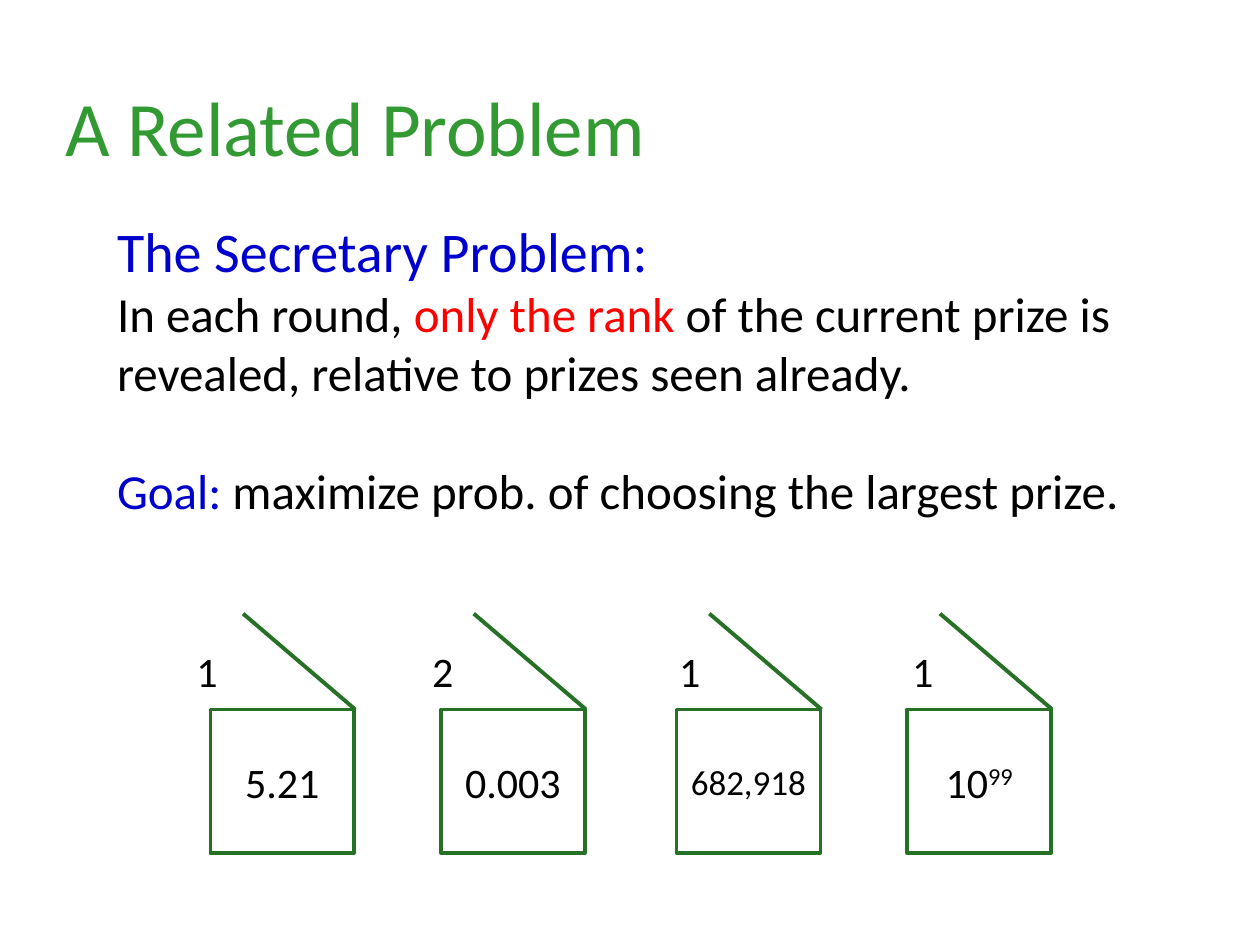
"""Build the slide that introduces the Secretary Problem with four opened prize boxes."""
import pptx
import pptx.dml.color
import pptx.enum.shapes
import pptx.enum.text
import pptx.oxml.ns
import pptx.util
from lxml import etree
from pptx.util import Cm, Pt

FONT = "Calibri"
BLACK, BLUE, RED, GREEN, DARK_GREEN = "000000", "0000CC", "FF0000", "339933", "267126"

TITLE = [(44, 0, [("A Related Problem", GREEN)])]
STATEMENT = [
    (32, 0, [("The Secretary Problem:", BLUE)]),
    (28, 0, [
        ("In each round, ", BLACK),
        ("only the rank", RED),
        (" of the current prize is revealed, relative to prizes seen already.", BLACK),
    ]),
    (28, 34, [("Goal:", BLUE), (" maximize prob. of choosing the largest prize.", BLACK)]),
]
PRIZES = [
    {"rank": "1", "value": "5.21", "power": "", "size": 24, "left": 4.24, "rank_left": 3.71},
    {"rank": "2", "value": "0.003", "power": "", "size": 24, "left": 8.89, "rank_left": 8.46},
    {"rank": "1", "value": "682,918", "power": "", "size": 20, "left": 13.64, "rank_left": 13.44},
    {"rank": "1", "value": "10", "power": "99", "size": 24, "left": 18.29, "rank_left": 18.14},
]
BOX_TOP, BOX_SIDE = 14.3, 2.9
LID_WIDTH, LID_HEIGHT = 2.26, 1.93
RANK_TOP = 12.88


def color(hex_code):
    return pptx.dml.color.RGBColor.from_string(hex_code)


def write(frame, paragraphs):
    for index, (size, gap, runs) in enumerate(paragraphs):
        paragraph = frame.add_paragraph() if index else frame.paragraphs[0]
        paragraph.font.name = FONT
        paragraph.font.size = Pt(size)
        paragraph.space_before = Pt(gap)
        for words, hex_code in runs:
            run = paragraph.add_run()
            run.text = words
            run.font.color.rgb = color(hex_code)


def add_text(slide, left, top, width, height, paragraphs, wrap=False):
    frame = slide.shapes.add_textbox(Cm(left), Cm(top), Cm(width), Cm(height)).text_frame
    frame.word_wrap = wrap
    write(frame, paragraphs)


def add_box(slide, prize):
    box = slide.shapes.add_shape(
        pptx.enum.shapes.MSO_SHAPE.RECTANGLE,
        Cm(prize["left"]), Cm(BOX_TOP), Cm(BOX_SIDE), Cm(BOX_SIDE))
    box.shadow.inherit = False
    box.fill.background()
    box.line.color.rgb = color(DARK_GREEN)
    box.line.width = Pt(2)
    box.text_frame.vertical_anchor = pptx.enum.text.MSO_ANCHOR.MIDDLE
    parts = [(part, BLACK) for part in (prize["value"], prize["power"]) if part]
    write(box.text_frame, [(prize["size"], 0, parts)])
    content = box.text_frame.paragraphs[0]
    content.alignment = pptx.enum.text.PP_ALIGN.CENTER
    for exponent in content.runs[1:]:
        exponent.font._element.set("baseline", "30000")


def add_lid(slide, prize):
    hinge = prize["left"] + BOX_SIDE + 0.02
    lid = slide.shapes.add_connector(
        pptx.enum.shapes.MSO_CONNECTOR.STRAIGHT,
        Cm(hinge), Cm(BOX_TOP), Cm(hinge - LID_WIDTH), Cm(BOX_TOP - LID_HEIGHT))
    lid.line.color.rgb = color(DARK_GREEN)
    lid.line.width = Pt(2.25)
    etree.SubElement(lid._element.spPr, pptx.oxml.ns.qn("a:effectLst"))


def main():
    deck = pptx.Presentation()
    deck.slide_width, deck.slide_height = Cm(25.4), Cm(19.05)
    slide = deck.slides.add_slide(deck.slide_layouts[6])
    add_text(slide, 1.07, 1.47, 12.32, 2.13, TITLE)
    add_text(slide, 2.11, 4.24, 22.66, 6.4, STATEMENT, wrap=True)
    for prize in PRIZES:
        add_box(slide, prize)
        add_text(slide, prize["rank_left"], RANK_TOP, 0.94, 1.27,
                 [(24, 0, [(prize["rank"], BLACK)])])
        add_lid(slide, prize)
    deck.save("out.pptx")


if __name__ == "__main__":
    main()
